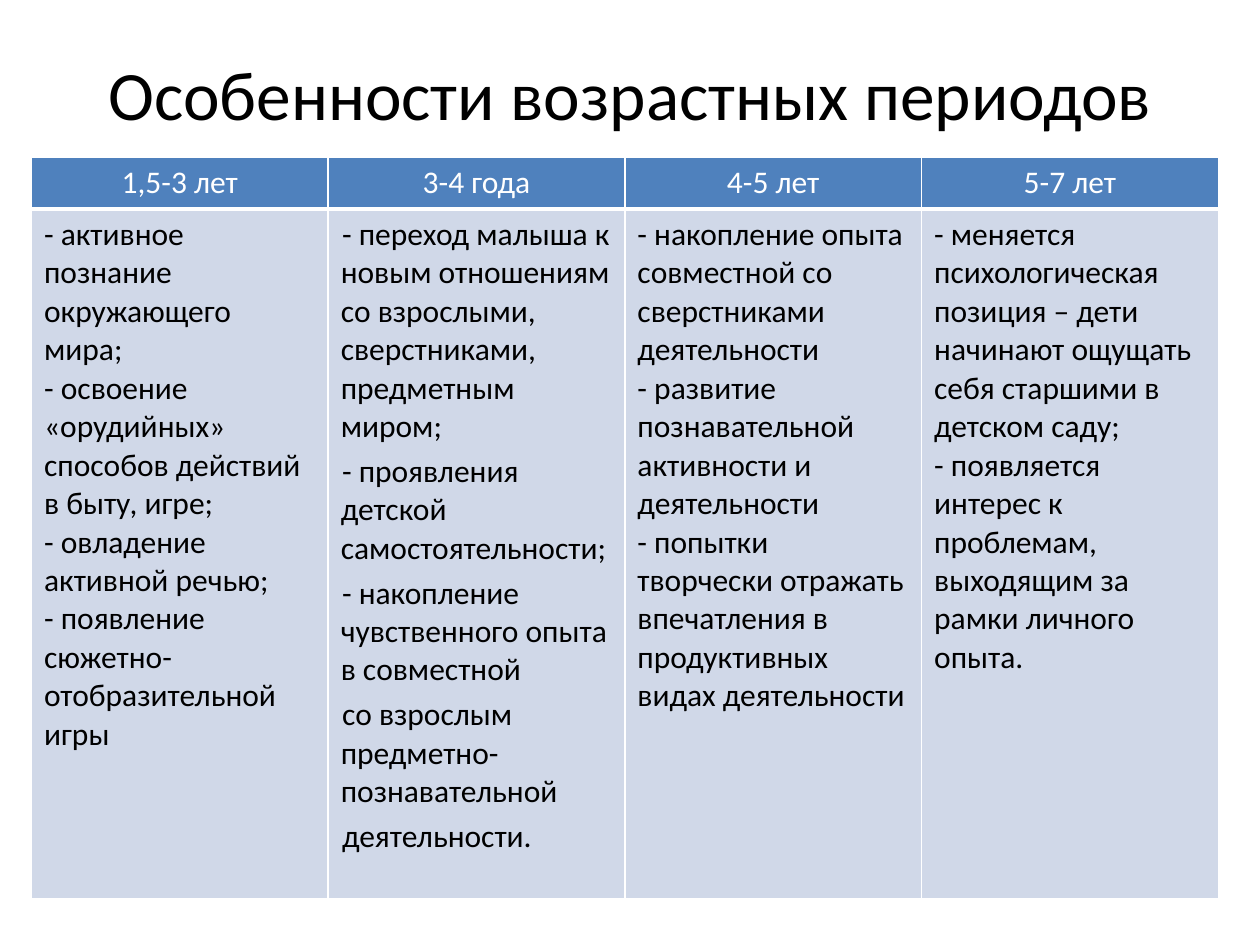
from lxml import etree
from pptx import Presentation
from pptx.dml.color import RGBColor
from pptx.enum.text import MSO_ANCHOR, PP_ALIGN
from pptx.oxml.ns import qn
from pptx.util import Inches, Pt

CENTER, LEFT = PP_ALIGN.CENTER, PP_ALIGN.LEFT
MIDDLE = MSO_ANCHOR.MIDDLE

TITLE = "Особенности возрастных периодов"
AGES = [
    ("1,5-3 лет", [
        "- активное познание окружающего мира;",
        "- освоение «орудийных» способов действий в быту, игре;",
        "- овладение активной речью;",
        "- появление сюжетно-отобразительной",
        "игры",
    ]),
    ("3-4 года", [
        "- переход малыша к новым отношениям со взрослыми, сверстниками, предметным миром;",
        "- проявления детской самостоятельности;",
        "- накопление чувственного опыта в совместной",
        "со взрослым предметно-познавательной",
        "деятельности.",
    ]),
    ("4-5 лет", [
        "- накопление опыта совместной со сверстниками деятельности",
        "- развитие познавательной активности и деятельности",
        "- попытки творчески отражать впечатления в продуктивных видах деятельности",
    ]),
    ("5-7 лет", [
        "- меняется психологическая позиция – дети начинают ощущать себя старшими в детском саду;",
        "- появляется интерес к проблемам, выходящим за рамки личного опыта.",
    ]),
]
SPACED = 1

THEME = {
    "font": "Calibri", "title": 39.6, "body": 18, "gap": 3.6,
    "ink": "000000", "paper": "FFFFFF", "head": "4F81BD", "cell": "D0D8E8",
}
WIDE, HIGH = 10, 7.5
EDGE, TOP = WIDE / 40, HIGH / 6
COL = 2.355
ROWS = (0.41, 5.47)


def write(frame, lines, size, color, align, gap=0):
    for i, line in enumerate(lines):
        para = frame.paragraphs[0] if i == 0 else frame.add_paragraph()
        para.alignment = align
        if gap:
            para._p.get_or_add_pPr().set("indent", str(Inches(0.01)))
            para.space_before = Pt(gap if i else 0)
        run = para.add_run()
        run.text = line
        font = run.font
        font.name, font.size, font.bold = THEME["font"], Pt(size), False
        font.color.rgb = RGBColor.from_string(color)


def border(cell, base):
    props = cell._tc.get_or_add_tcPr()
    for side in "LRTB":
        width = base if side == "B" else 1
        line = etree.SubElement(props, qn(f"a:ln{side}"), w=str(Pt(width)))
        fill = etree.SubElement(line, qn("a:solidFill"))
        etree.SubElement(fill, qn("a:srgbClr"), val=THEME["paper"])


def paint(cell, color, base):
    border(cell, base)
    cell.fill.solid()
    cell.fill.fore_color.rgb = RGBColor.from_string(color)


def main():
    deck = Presentation()
    deck.slide_width, deck.slide_height = Inches(WIDE), Inches(HIGH)
    slide = deck.slides.add_slide(deck.slide_layouts[6])

    box = slide.shapes.add_textbox(
        Inches(WIDE * 0.05), Inches(HIGH * 0.04),
        Inches(WIDE * 0.9), Inches(0.87))
    frame = box.text_frame
    frame.word_wrap = True
    frame.vertical_anchor = MIDDLE
    write(frame, [TITLE], THEME["title"], THEME["ink"], CENTER)

    table = slide.shapes.add_table(
        len(ROWS), len(AGES), Inches(EDGE), Inches(TOP),
        Inches(COL * len(AGES)), Inches(sum(ROWS))).table
    table.horz_banding = False
    for row, height in zip(table.rows, ROWS):
        row.height = Inches(height)
    for i, (age, traits) in enumerate(AGES):
        table.columns[i].width = Inches(COL)
        head, body = table.cell(0, i), table.cell(1, i)
        paint(head, THEME["head"], 3)
        paint(body, THEME["cell"], 1)
        write(head.text_frame, [age], THEME["body"], THEME["paper"], CENTER)
        gap = THEME["gap"] if i == SPACED else 0
        write(body.text_frame, traits, THEME["body"], THEME["ink"], LEFT, gap)

    deck.save("out.pptx")


if __name__ == "__main__":
    main()
